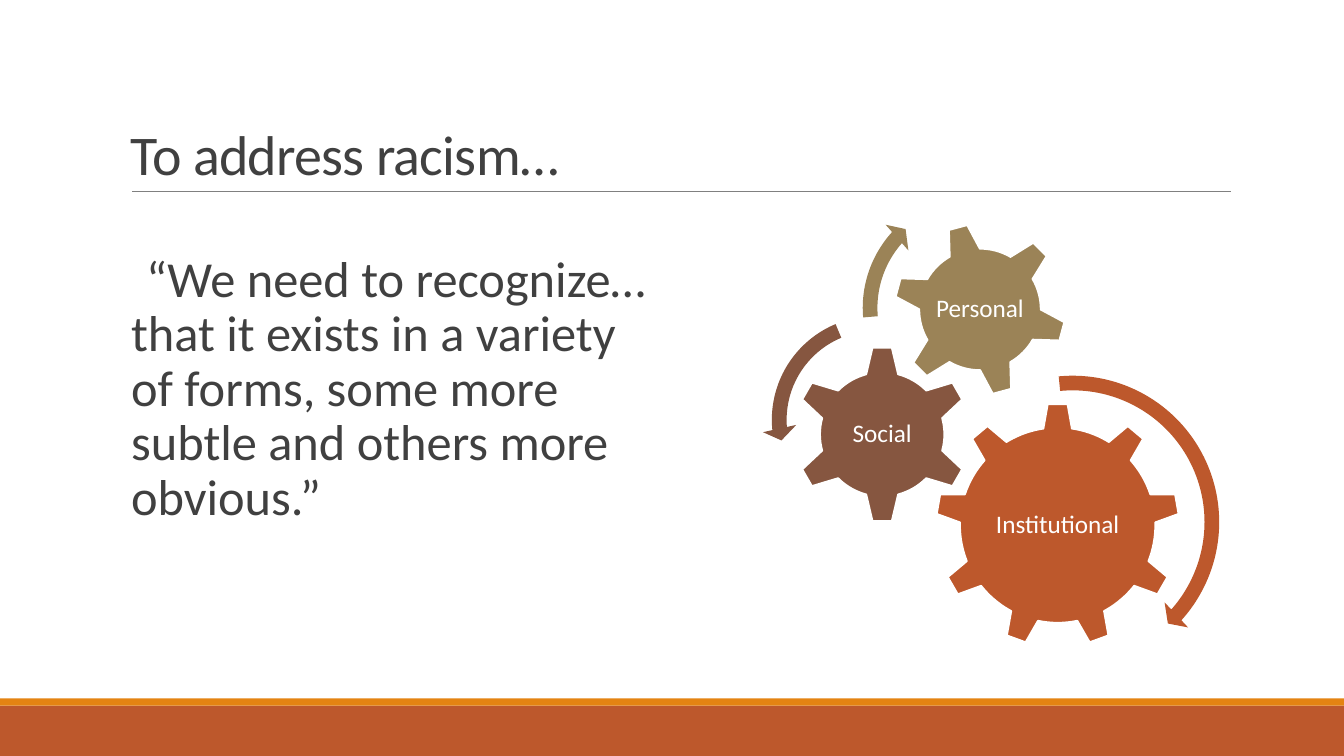
from dataclasses import dataclass

from lxml import etree
from pptx import Presentation
from pptx.dml.color import RGBColor
from pptx.enum.shapes import MSO_CONNECTOR, MSO_SHAPE as Shape
from pptx.enum.text import MSO_ANCHOR as Anchor, PP_ALIGN as Align
from pptx.oxml.ns import qn
from pptx.util import Inches, Pt


@dataclass(frozen=True)
class Theme:
    font: str = "Calibri"
    ink: str = "404040"
    white: str = "FFFFFF"
    rule: str = "808080"
    rust: str = "BD582C"
    orange: str = "E48312"
    brown: str = "865640"
    olive: str = "9B8357"
    title_size: int = 40
    quote_size: int = 36
    label_size: int = 18


theme = Theme()
prs = Presentation()
prs.slide_width, prs.slide_height = Inches(13.33), Inches(7.5)
slide = prs.slides.add_slide(prs.slide_layouts[6])


def add_filled(kind, left, top, width, height, color):
    shape = slide.shapes.add_shape(
        kind, Inches(left), Inches(top), Inches(width), Inches(height))
    shape.shadow.inherit = False
    shape.fill.solid()
    shape.fill.fore_color.rgb = RGBColor.from_string(color)
    shape.line.fill.background()
    return shape


def add_text(text, left, top, width, height, size, color, anchor, spacing, insets):
    """Add a one-paragraph text box; insets are the side and the top/bottom margin."""
    box = slide.shapes.add_textbox(
        Inches(left), Inches(top), Inches(width), Inches(height))
    frame = box.text_frame
    frame.word_wrap = True
    frame.vertical_anchor = anchor
    frame.margin_left = frame.margin_right = Inches(insets[0])
    frame.margin_top = frame.margin_bottom = Inches(insets[1])
    frame.text = text
    paragraph = frame.paragraphs[0]
    paragraph.line_spacing = spacing
    font = paragraph.runs[0].font
    font.name, font.size = theme.font, Pt(size)
    font.color.rgb = RGBColor.from_string(color)
    return paragraph


# Footer bands and title rule
add_filled(Shape.RECTANGLE, 0, 7, 13.33, 0.5, theme.rust)
add_filled(Shape.RECTANGLE, 0, 6.93, 13.33, 0.07, theme.orange)
title_rule = slide.shapes.add_connector(
    MSO_CONNECTOR.STRAIGHT, Inches(1.31), Inches(1.9), Inches(12.21), Inches(1.9))
title_rule.line.color.rgb = RGBColor.from_string(theme.rule)
title_rule.line.width = Pt(0.5)
etree.SubElement(title_rule._element.spPr, qn("a:effectLst"))

# Title and quotation
title = add_text("To address racism…", 1.2, 0.31, 11, 1.59, theme.title_size,
                 theme.ink, Anchor.BOTTOM, 0.85, (0.1, 0.05))
title.runs[0].font._element.set("spc", "-50")

quote = add_text(
    "“We need to recognize…that it exists in a variety of forms, "
    "some more subtle and others more obvious.”",
    1.2, 2.47, 5.21, 3.75, theme.quote_size, theme.ink, Anchor.TOP, 0.9, (0, 0.05))
quote.space_before, quote.space_after = Pt(12), Pt(2)
quote_format = quote._p.get_or_add_pPr()
quote_format.set("marL", str(Inches(0.1)))
quote_format.set("indent", str(Inches(-0.1)))
bullet_color = etree.SubElement(quote_format, qn("a:buClr"))
etree.SubElement(bullet_color, qn("a:srgbClr")).set("val", theme.orange)
etree.SubElement(quote_format, qn("a:buChar")).set("char", " ")

# Gears, each with a label on its centre: centre x, y, size, rotation, label width
gears = [
    ("Institutional", Shape.GEAR_9, 10.49, 5.21, 2.42, 0, 1.45, theme.rust),
    ("Social", Shape.GEAR_6, 8.75, 4.31, 1.76, 0, 0.87, theme.brown),
    ("Personal", Shape.GEAR_6, 9.72, 3.07, 1.72, 345, 0.97, theme.olive),
]
for label, kind, x, y, size, rotation, label_width, color in gears:
    gear = add_filled(kind, x - size / 2, y - size / 2, size, size, color)
    gear.rotation = rotation
    gear.line.color.rgb = RGBColor.from_string(theme.white)
    gear.line.width = Pt(1.25)
    caption = add_text(label, x - label_width / 2, y - label_width / 2, label_width,
                       label_width, theme.label_size, theme.white, Anchor.MIDDLE,
                       0.9, (0.03, 0.03))
    caption.alignment = Align.CENTER

# Turning arrows: left, top, size, then the arc's adjustments
arrows = [
    (Shape.CIRCULAR_ARROW, 9.09, 3.63, 3.1, theme.rust,
     (0.047, 2.99, 25.12, 158.7, 0.055)),
    (Shape.LEFT_CIRCULAR_ARROW, 7.56, 3.04, 2.25, theme.brown,
     (0.065, 4.3, 104.89, 148.38, 0.075)),
    (Shape.CIRCULAR_ARROW, 8.46, 1.84, 2.43, theme.olive,
     (0.06, 3.94, 133.14, 105.08, 0.07)),
]
for kind, left, top, size, color, adjustments in arrows:
    arrow = add_filled(kind, left, top, size, size, color)
    for index, value in enumerate(adjustments):
        arrow.adjustments[index] = value

prs.save("out.pptx")
